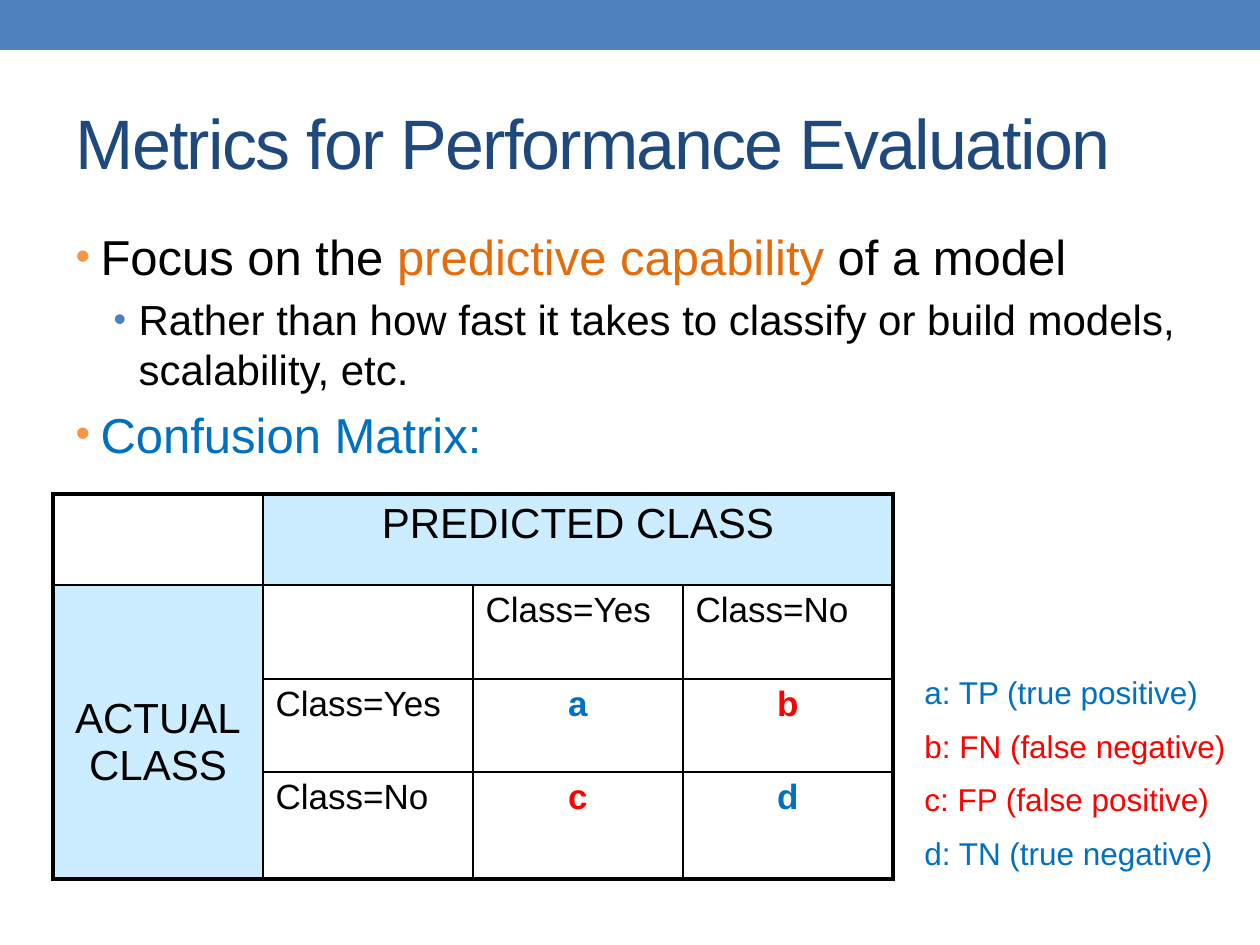
from lxml import etree
from pptx import Presentation
from pptx.dml.color import RGBColor
from pptx.enum.shapes import MSO_SHAPE
from pptx.enum.text import MSO_ANCHOR, MSO_AUTO_SIZE, PP_ALIGN
from pptx.oxml.ns import qn
from pptx.util import Pt

EMU_PER_PX = 914400 / 126
LEFT, CENTER = PP_ALIGN.LEFT, PP_ALIGN.CENTER
MIDDLE = MSO_ANCHOR.MIDDLE
FONT = "Arial"

BLACK = RGBColor(0x00, 0x00, 0x00)
WHITE = RGBColor(0xFF, 0xFF, 0xFF)
BAND_BLUE = RGBColor(0x4F, 0x81, 0xBD)
TITLE_NAVY = RGBColor(0x1F, 0x49, 0x7D)
BULLET_ORANGE = RGBColor(0xF7, 0x96, 0x46)
ACCENT_ORANGE = RGBColor(0xE4, 0x6C, 0x0A)
CORRECT_BLUE = RGBColor(0x00, 0x70, 0xC0)
ERROR_RED = RGBColor(0xFF, 0x00, 0x00)
HEADER_BLUE = RGBColor(0xCC, 0xEC, 0xFF)


def px(length):
    return round(length * EMU_PER_PX)


def place(shape, box):
    shape.left, shape.top, shape.width, shape.height = map(px, box)


def format_run(run, size, color, bold=False):
    run.font.name = FONT
    run.font.size = Pt(size)
    run.font.color.rgb = color
    run.font.bold = bold


def space_before(paragraph, percent):
    spacing = etree.Element(qn("a:spcBef"))
    etree.SubElement(spacing, qn("a:spcPct"), val=str(percent * 1000))
    paragraph._p.get_or_add_pPr().insert(0, spacing)


def set_bullet(paragraph, color, indent, hanging):
    properties = paragraph._p.get_or_add_pPr()
    properties.set("marL", str(px(indent)))
    properties.set("indent", str(-px(hanging)))
    bullet_color = etree.SubElement(properties, qn("a:buClr"))
    etree.SubElement(bullet_color, qn("a:srgbClr"), val=str(color))
    etree.SubElement(properties, qn("a:buSzPct"), val="85000")
    etree.SubElement(properties, qn("a:buFont"), typeface=FONT)
    etree.SubElement(properties, qn("a:buChar"), char="•")


def add_band(slide, box):
    band = slide.shapes.add_shape(MSO_SHAPE.RECTANGLE, *map(px, box))
    band.shadow.inherit = False
    band.fill.solid()
    band.fill.fore_color.rgb = BAND_BLUE
    band.line.fill.background()


def fill_title(slide, box):
    title = slide.shapes.title
    place(title, box)
    title.text_frame.text = "Metrics for Performance Evaluation"
    title.text_frame.vertical_anchor = MIDDLE
    paragraph = title.text_frame.paragraphs[0]
    paragraph.alignment = LEFT
    run = paragraph.runs[0]
    format_run(run, 40, TITLE_NAVY)
    run._r.get_or_add_rPr().set("spc", "-100")


def fill_body(slide, box):
    body = slide.placeholders[1]
    place(body, box)
    # Level and (text, color) runs of each item
    items = [
        (0, [("Focus on the ", BLACK), ("predictive capability ", ACCENT_ORANGE),
             ("of a model", BLACK)]),
        (1, [("Rather than how fast it takes to classify or build models, "
              "scalability, etc.", BLACK)]),
        (0, [("Confusion Matrix:", CORRECT_BLUE)]),
    ]
    # Size, bullet color and indent of each level
    levels = [(28, BULLET_ORANGE, 25), (24, BAND_BLUE, 63)]
    frame = body.text_frame
    for index, (level, runs) in enumerate(items):
        paragraph = frame.add_paragraph() if index else frame.paragraphs[0]
        size, bullet_color, indent = levels[level]
        paragraph.level = level
        space_before(paragraph, 20)
        set_bullet(paragraph, bullet_color, indent, 25)
        for text, color in runs:
            run = paragraph.add_run()
            run.text = text
            format_run(run, size, color)


def set_borders(cell, row, column, row_count, column_count):
    edges = {
        "a:lnL": column == 0,
        "a:lnR": column + cell.span_width == column_count,
        "a:lnT": row == 0,
        "a:lnB": row + cell.span_height == row_count,
    }
    properties = cell._tc.get_or_add_tcPr()
    for tag, is_outer in edges.items():
        if cell.is_spanned and not is_outer:
            continue
        width = Pt(2.25) if is_outer else Pt(1)
        line = etree.SubElement(properties, qn(tag), w=str(width))
        fill = etree.SubElement(line, qn("a:solidFill"))
        etree.SubElement(fill, qn("a:srgbClr"), val=str(BLACK))


def add_confusion_matrix(slide, box, row_heights):
    row_count, column_count = len(row_heights), 4
    table = slide.shapes.add_table(row_count, column_count, *map(px, box)).table
    table.first_row = table.horz_banding = False
    for column in table.columns:
        column.width = px(box[2] / column_count)
    for row, height in zip(table.rows, row_heights):
        row.height = px(height)
    table.cell(0, 1).merge(table.cell(0, 3))
    table.cell(1, 0).merge(table.cell(3, 0))

    # Text, alignment, size, color and bold of each filled cell
    header = (CENTER, 24, BLACK, False)
    label = (LEFT, 20, BLACK, False)
    correct = (CENTER, 20, CORRECT_BLUE, True)
    error = (CENTER, 20, ERROR_RED, True)
    contents = {
        (0, 1): ("PREDICTED CLASS", header),
        (1, 0): ("ACTUAL\vCLASS", header),
        (1, 2): ("Class=Yes", label),
        (1, 3): ("Class=No", label),
        (2, 1): ("Class=Yes", label),
        (2, 2): ("a", correct),
        (2, 3): ("b", error),
        (3, 1): ("Class=No", label),
        (3, 2): ("c", error),
        (3, 3): ("d", correct),
    }
    for row in range(row_count):
        for column in range(column_count):
            cell = table.cell(row, column)
            set_borders(cell, row, column, row_count, column_count)
            text, style = contents.get((row, column), ("", label))
            cell.fill.solid()
            cell.fill.fore_color.rgb = HEADER_BLUE if style == header else WHITE
            if not text:
                continue
            alignment, *run_format = style
            cell.text_frame.text = text
            paragraph = cell.text_frame.paragraphs[0]
            paragraph.alignment = alignment
            paragraph.space_after = Pt(4)
            space_before(paragraph, 10)
            for run in paragraph.runs:
                format_run(run, *run_format)

    # The row header sits a little below the middle
    actual = table.cell(1, 0)
    actual.vertical_anchor = MIDDLE
    actual.margin_top = px(28)


def add_legend(slide, box):
    entries = [
        ("a: TP (true positive)", CORRECT_BLUE),
        ("b: FN (false negative)", ERROR_RED),
        ("c: FP (false positive)", ERROR_RED),
        ("d: TN (true negative)", CORRECT_BLUE),
    ]
    frame = slide.shapes.add_textbox(*map(px, box)).text_frame
    frame.word_wrap = True
    frame.auto_size = MSO_AUTO_SIZE.SHAPE_TO_FIT_TEXT
    frame.text = "\n".join(text for text, _ in entries)
    for paragraph, (_, color) in zip(frame.paragraphs, entries):
        space_before(paragraph, 50)
        format_run(paragraph.runs[0], 18, color)


def main():
    presentation = Presentation()
    presentation.slide_width, presentation.slide_height = px(1260), px(945)
    slide = presentation.slides.add_slide(presentation.slide_layouts[1])
    add_band(slide, (0, 0, 1260, 50))
    fill_title(slide, (63, 73, 1134, 136))
    fill_body(slide, (63, 220, 1134, 672))
    add_confusion_matrix(slide, (53, 494, 840, 385), (91, 94, 93, 107))
    add_legend(slide, (912, 667, 338, 223))
    presentation.save("out.pptx")


if __name__ == "__main__":
    main()
